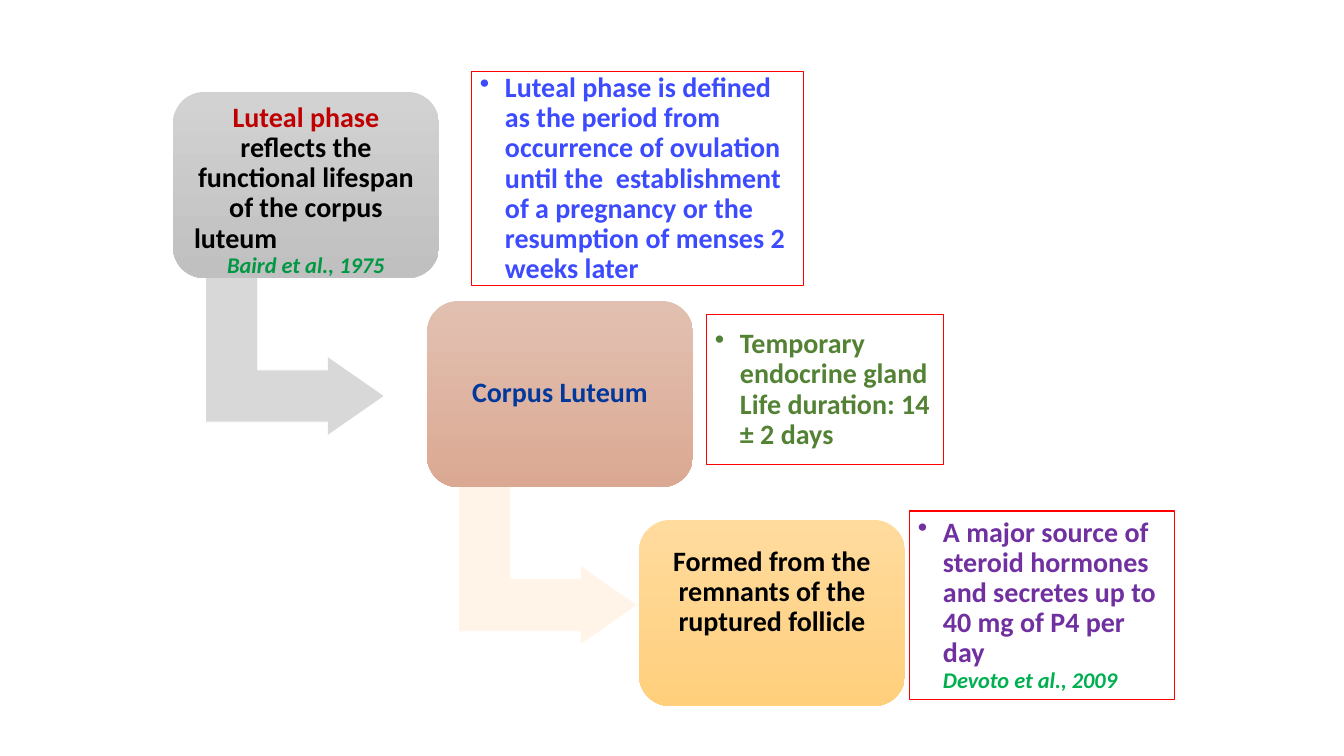
from pptx import Presentation
from pptx.dml.color import RGBColor
from pptx.enum.shapes import MSO_SHAPE
from pptx.enum.text import MSO_ANCHOR, PP_ALIGN
from pptx.oxml.ns import qn
from pptx.util import Pt
from lxml.etree import SubElement

PX = 914400 / 100.8  # EMU in one px

THEME = {
    "font": "Calibri", "body": 20, "cite": 16,
    "red": "C00000", "black": "000000", "navy": "00389B", "blue": "3D4BFF",
    "olive": "548235", "purple": "7030A0", "cite_card": "009843",
    "cite_note": "00B050", "frame": "FF0000", "white": "FFFFFF",
    "grey_card": ("D2D2D2", "C0C0C0"), "clay_card": ("E2C0B1", "DBA993"),
    "gold_card": ("FFDB9E", "FFCF7C"),
    "grey_arrow": "D8D8D8", "cream_arrow": "FFF4E7",
}


def px(length):
    return round(length * PX)


def add_text(para, text, color="black", size="body", italic=False,
             align=PP_ALIGN.LEFT, margin=0, bullet=False):
    """Append a run to a paragraph and format both."""
    para.alignment = align
    para.line_spacing = 0.9
    props = para._p.get_or_add_pPr()
    props.set("marL", str(px(margin)))
    props.set("indent", str(px(-margin if bullet else 0)))
    if bullet:
        SubElement(props, qn("a:buChar")).set("char", "•")
    span = para.add_run()
    span.text = text
    span.font.name = THEME["font"]
    span.font.size = Pt(THEME[size])
    span.font.bold = True
    span.font.italic = italic
    span.font.color.rgb = RGBColor.from_string(THEME[color])


def add_box(kind, left, top, width, height, inset_top=8):
    """Add a shadowless shape with wrapping text and even side insets."""
    box = slide.shapes.add_shape(kind, px(left), px(top), px(width), px(height))
    box.shadow.inherit = False
    frame = box.text_frame
    frame.word_wrap = True
    frame.margin_left = frame.margin_right = frame.margin_bottom = px(8)
    frame.margin_top = px(inset_top)
    return box


deck = Presentation()
deck.slide_width, deck.slide_height = px(1344), px(756)
slide = deck.slides.add_slide(deck.slide_layouts[6])

# Bent arrows between the steps
for left, top, color in [(216, 267, "grey_arrow"), (469, 476, "cream_arrow")]:
    arrow = add_box(MSO_SHAPE.BENT_UP_ARROW, left, top, 158, 179)
    arrow.rotation = 90
    for index, value in enumerate((0.33, 0.25, 0.36)):
        arrow.adjustments[index] = value
    arrow.fill.solid()
    arrow.fill.fore_color.rgb = RGBColor.from_string(THEME[color])
    arrow.line.color.rgb = RGBColor.from_string(THEME["white"])
    arrow.line.width = Pt(0.5)

# Step cards
cards = []
for left, top, inset_top, colors in [(173, 92, 2, "grey_card"),
                                     (427, 301, 68, "clay_card"),
                                     (639, 520, 18, "gold_card")]:
    card = add_box(MSO_SHAPE.ROUNDED_RECTANGLE, left, top, 266, 186, inset_top)
    card.text_frame.vertical_anchor = MSO_ANCHOR.TOP
    card.line.fill.background()
    card.fill.gradient()
    card.fill.gradient_angle = 270
    for stop, position, color in zip(card.fill.gradient_stops, (0, 1), THEME[colors]):
        stop.position = position
        stop.color.rgb = RGBColor.from_string(color)
    cards.append(card.text_frame)

# Card wording
phase, corpus, follicle = cards
CENTER = PP_ALIGN.CENTER
para = phase.paragraphs[0]
add_text(para, "Luteal phase ", color="red", align=CENTER)
add_text(para, "reflects the functional lifespan of the corpus", align=CENTER)
add_text(phase.add_paragraph(), "luteum", margin=4)
add_text(phase.add_paragraph(), "Baird et al., 1975", color="cite_card",
         size="cite", italic=True, align=CENTER)
add_text(corpus.paragraphs[0], "Corpus Luteum", color="navy", align=CENTER)
add_text(follicle.paragraphs[0], "Formed from the remnants of the ruptured follicle",
         align=CENTER)

# Framed notes beside the cards
notes = [
    (472, 72, 332, 214, "blue", "Luteal phase is defined as the period from occurrence of "
     "ovulation until the  establishment of a pregnancy or the resumption of menses "
     "2 weeks later", None),
    (707, 315, 237, 150, "olive",
     "Temporary endocrine gland Life duration: 14 ± 2 days", None),
    (910, 511, 265, 189, "purple", "A major source of steroid hormones and secretes up to "
     "40 mg of P4 per day", "Devoto et al., 2009"),
]
for left, top, width, height, color, text, citation in notes:
    note = add_box(MSO_SHAPE.RECTANGLE, left, top, width, height)
    note.fill.background()
    note.line.color.rgb = RGBColor.from_string(THEME["frame"])
    note.line.width = Pt(0.75)
    frame = note.text_frame
    frame.vertical_anchor = MSO_ANCHOR.MIDDLE
    add_text(frame.paragraphs[0], text, color=color, margin=25, bullet=True)
    if citation:
        add_text(frame.add_paragraph(), citation, color="cite_note", size="cite",
                 italic=True, margin=25)

deck.save("out.pptx")
